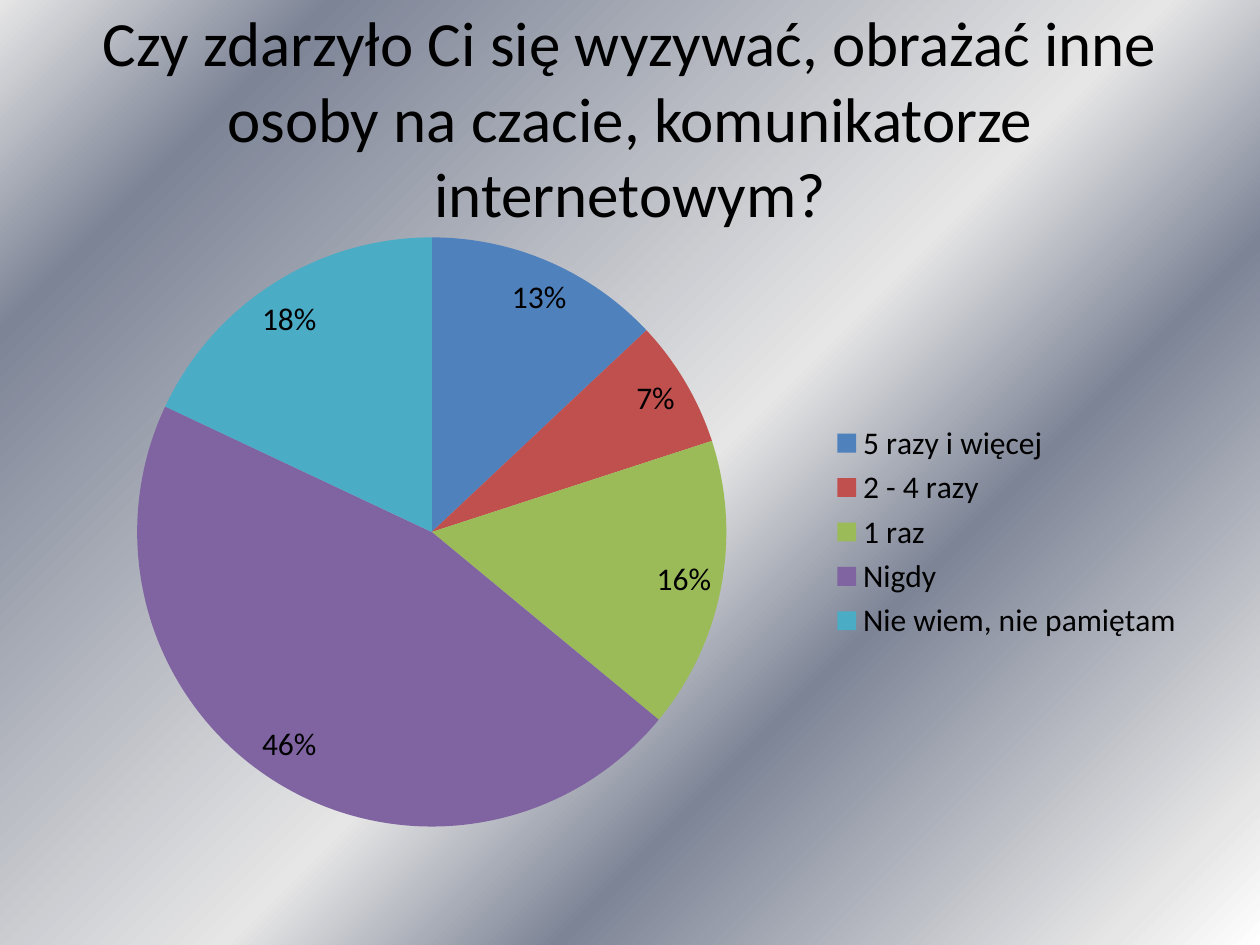
from lxml import etree
from pptx import Presentation
from pptx import util as u
from pptx.chart.data import CategoryChartData
from pptx.dml.color import RGBColor
from pptx.enum import chart as ch
from pptx.enum import text
from pptx.oxml.ns import qn

PX = u.Inches(1) / 126
BLACK = RGBColor(0x00, 0x00, 0x00)
WHITE = RGBColor(0xFF, 0xFF, 0xFF)
SILVER = RGBColor(0xE6, 0xE6, 0xE6)
STEEL = RGBColor(0x7D, 0x84, 0x96)
BLUE = RGBColor(0x4F, 0x81, 0xBD)
RED = RGBColor(0xC0, 0x50, 0x4D)
GREEN = RGBColor(0x9B, 0xBB, 0x59)
PURPLE = RGBColor(0x80, 0x64, 0xA2)
TEAL = RGBColor(0x4B, 0xAC, 0xC6)

BACKGROUND = [(0, WHITE), (7, SILVER), (32, STEEL), (47, SILVER),
              (85, STEEL), (100, SILVER)]
ANSWERS = [
    ("5 razy i więcej", 0.13, BLUE),
    ("2 - 4 razy", 0.07, RED),
    ("1 raz", 0.16, GREEN),
    ("Nigdy", 0.46, PURPLE),
    ("Nie wiem, nie pamiętam", 0.18, TEAL),
]


def px(*lengths):
    return [u.Emu(round(n * PX)) for n in lengths]


class Deck:
    font = "Calibri"
    color = BLACK

    def __init__(self, width, height):
        self.prs = Presentation()
        self.prs.slide_width, self.prs.slide_height = px(width, height)
        self.s = self.prs.slides.add_slide(self.prs.slide_layouts[6])

    def style(self, font, size):
        font.name = self.font
        font.size = u.Pt(size)
        font.color.rgb = self.color

    def background(self, stops, angle):
        """Fill the slide with a linear gradient; angle is clockwise."""
        fill = self.s.background.fill
        fill.gradient()
        fill.gradient_angle = 360 - angle
        gs_list = next(self.s.element.iter(qn("a:gsLst")))
        for gs in list(gs_list):
            gs_list.remove(gs)
        for pos, color in stops:
            gs = etree.SubElement(gs_list, qn("a:gs"), pos=str(pos * 1000))
            etree.SubElement(gs, qn("a:srgbClr"), val=str(color))

    def title(self, words, box, size):
        sp = self.s.shapes.add_textbox(*px(*box))
        tf = sp.text_frame
        tf.word_wrap = True
        tf.vertical_anchor = text.MSO_ANCHOR.MIDDLE
        p = tf.paragraphs[0]
        p.alignment = text.PP_ALIGN.CENTER
        r = p.add_run()
        r.text = words
        self.style(r.font, size)

    def pie(self, answers, box, size):
        names, shares, colors = zip(*answers)
        data = CategoryChartData(number_format="0%")
        data.categories = names
        data.add_series("Series 1", shares)
        chart = self.s.shapes.add_chart(
            ch.XL_CHART_TYPE.PIE, *px(*box), data).chart
        self.style(chart.font, size)
        chart.has_title = False
        chart.has_legend = True
        chart.legend.position = ch.XL_LEGEND_POSITION.RIGHT
        chart.legend.include_in_layout = False

        plot = chart.plots[0]
        plot.vary_by_categories = True
        for i, color in enumerate(colors):
            fill = plot.series[0].points[i].format.fill
            fill.solid()
            fill.fore_color.rgb = color

        labels = plot.series[0].data_labels
        labels.show_value = True
        labels.number_format = "0%"
        labels.number_format_is_linked = False
        labels.position = ch.XL_LABEL_POSITION.BEST_FIT
        self.style(labels.font, size)


def main():
    deck = Deck(1260, 945)
    deck.background(BACKGROUND, 225)
    deck.title("Czy zdarzyło Ci się wyzywać, obrażać inne osoby na czacie, "
               "komunikatorze internetowym?", (63, 38, 1134, 158), 36)
    deck.pie(ANSWERS, (63, 220, 1134, 624), 18)
    deck.prs.save("out.pptx")


if __name__ == "__main__":
    main()
